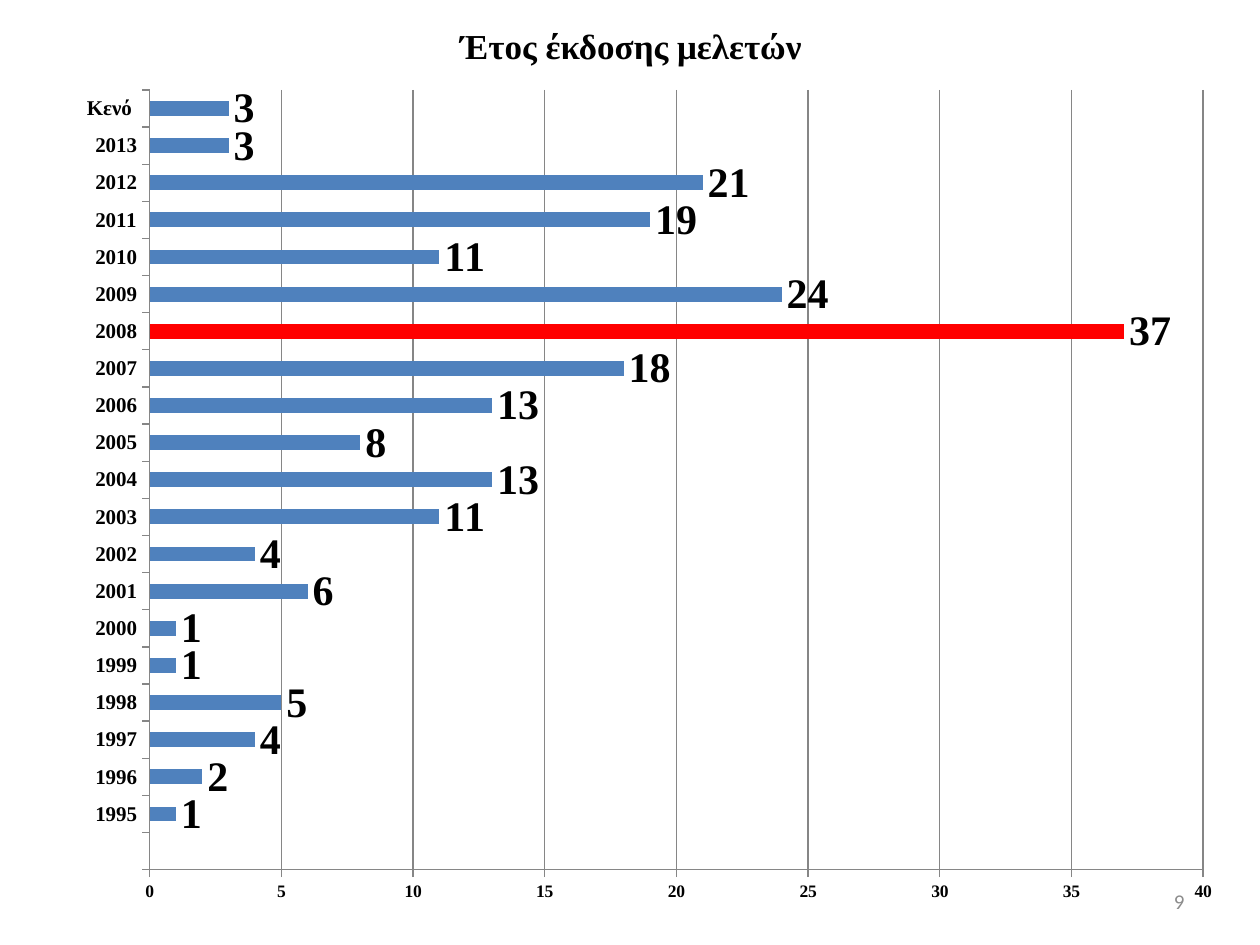
from lxml.etree import SubElement
from pptx import Presentation
from pptx.chart.data import CategoryChartData
from pptx.dml.color import RGBColor
from pptx.enum.chart import XL_CHART_TYPE, XL_LABEL_POSITION, XL_TICK_MARK
from pptx.enum.text import MSO_ANCHOR, PP_ALIGN
from pptx.oxml.ns import qn
from pptx.util import Inches, Pt

BLACK = RGBColor(0x00, 0x00, 0x00)
GRAY = RGBColor(0x8C, 0x8C, 0x8C)
LINE_GRAY = RGBColor(0x86, 0x86, 0x86)
BLUE = RGBColor(0x4F, 0x81, 0xBD)
RED = RGBColor(0xFF, 0x00, 0x00)

SERIF = "Times New Roman"
HIGHLIGHTED_YEAR = "2008"
CATEGORIES = ["", *map(str, range(1995, 2014)), "Kενό "]
COUNTS = [None, 1, 2, 4, 5, 1, 1, 6, 4, 11, 13, 8, 13, 18, 37, 24, 11, 19, 21, 3, 3]
PLOT_LAYOUT = {
    "layoutTarget": "inner", "xMode": "edge", "yMode": "edge",
    "x": 0.073, "y": 0.02, "w": 0.9, "h": 0.921,
}


def set_attributes(target, values):
    """Set each named attribute of the target."""
    for name, value in values.items():
        setattr(target, name, value)


def format_font(font, size, color=BLACK, name=SERIF, bold=True):
    """Apply typeface, size, weight and colour to a font."""
    set_attributes(font, {"name": name, "size": Pt(size), "bold": bold})
    font.color.rgb = color


def fill_text(shape, text, alignment, **font_format):
    """Write one vertically centred line into a shape."""
    frame = shape.text_frame
    set_attributes(frame, {"word_wrap": True, "vertical_anchor": MSO_ANCHOR.MIDDLE})
    paragraph = frame.paragraphs[0]
    paragraph.alignment = alignment
    run = paragraph.add_run()
    run.text = text
    format_font(run.font, **font_format)


def add_title(slide, text):
    """Place and format the slide title."""
    title = slide.shapes.title
    set_attributes(title, {
        "left": Inches(0.51), "top": Inches(0.13),
        "width": Inches(9), "height": Inches(0.47),
    })
    fill_text(title, text, PP_ALIGN.CENTER, size=20)


def add_page_number(slide, text):
    """Add the page number at the lower right."""
    box = slide.shapes.add_textbox(Inches(7.17), Inches(6.95), Inches(2.33), Inches(0.4))
    fill_text(box, text, PP_ALIGN.RIGHT, size=12, color=GRAY, name="Calibri", bold=False)


def format_axis(axis, size):
    """Style the labels, ticks and line of an axis."""
    axis.major_tick_mark = XL_TICK_MARK.OUTSIDE
    format_font(axis.tick_labels.font, size)
    axis.format.line.color.rgb = LINE_GRAY
    axis.format.line.width = Pt(0.75)


def set_plot_layout(chart):
    """Fix the inner plot area as fractions of the chart."""
    plot_area = chart._chartSpace.chart.plotArea
    for old_layout in plot_area.findall(qn("c:layout")):
        plot_area.remove(old_layout)
    layout = plot_area.makeelement(qn("c:layout"))
    plot_area.insert(0, layout)
    manual_layout = SubElement(layout, qn("c:manualLayout"))
    for name, value in PLOT_LAYOUT.items():
        SubElement(manual_layout, qn(f"c:{name}")).set("val", str(value))


def format_series(series):
    """Colour the bars and highlight the peak year."""
    peak = series.points[CATEGORIES.index(HIGHLIGHTED_YEAR)]
    for element, color in ((series, BLUE), (peak, RED)):
        element.format.fill.solid()
        element.format.fill.fore_color.rgb = color
    labels = series.data_labels
    set_attributes(labels, {"show_value": True, "position": XL_LABEL_POSITION.OUTSIDE_END})
    format_font(labels.font, 24)


def add_year_chart(slide):
    """Add the bar chart of studies per publication year."""
    data = CategoryChartData()
    data.categories = CATEGORIES
    data.add_series("Series 1", COUNTS)
    chart = slide.shapes.add_chart(
        XL_CHART_TYPE.BAR_CLUSTERED,
        Inches(0.51), Inches(0.58), Inches(9.29), Inches(6.72), data,
    ).chart
    set_attributes(chart, {"has_legend": False, "has_title": False})
    format_font(chart.font, 10, name="Calibri", bold=False)
    set_attributes(chart.plots[0], {"vary_by_categories": False, "gap_width": 150})
    format_axis(chart.category_axis, 12)
    value_axis = chart.value_axis
    format_axis(value_axis, 10)
    set_attributes(value_axis, {
        "minimum_scale": 0, "maximum_scale": 40, "major_unit": 5,
        "has_major_gridlines": True,
    })
    gridline = value_axis.major_gridlines.format.line
    gridline.color.rgb = LINE_GRAY
    gridline.width = Pt(0.75)
    format_series(chart.plots[0].series[0])
    set_plot_layout(chart)


def main():
    """Build and save the presentation."""
    presentation = Presentation()
    set_attributes(presentation, {"slide_width": Inches(10), "slide_height": Inches(7.5)})
    slide = presentation.slides.add_slide(presentation.slide_layouts[5])
    add_page_number(slide, "9")
    add_title(slide, "Έτος έκδοσης μελετών")
    add_year_chart(slide)
    presentation.save("out.pptx")


if __name__ == "__main__":
    main()
